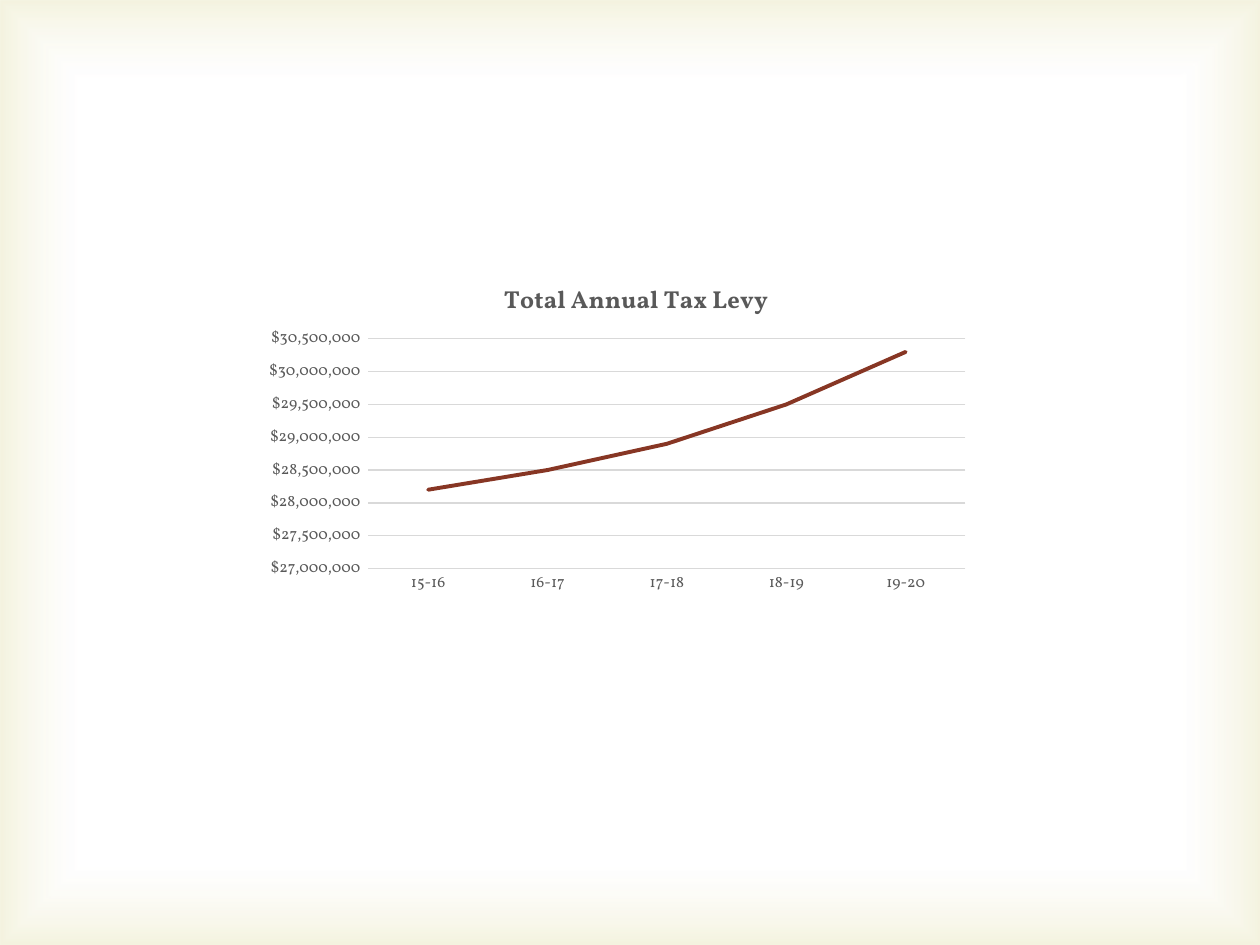
from lxml import etree
from pptx import Presentation
from pptx import util as u
from pptx.chart.data import CategoryChartData
from pptx.dml.color import RGBColor
from pptx.enum import chart as ch, shapes
from pptx.oxml import parse_xml
from pptx.oxml.ns import nsdecls, qn

PX = 914400 / 126
FONT = "Vollkorn"
HUE = {"white": "FFFFFF", "edge": "D1CA75", "text": "595959",
       "grid": "D9D9D9", "line": "873624"}


def px(n):
    return u.Emu(round(n * PX))


def ink(font, size, bold=False):
    font.name, font.size, font.bold = FONT, u.Pt(size), bold
    font.color.rgb = RGBColor.from_string(HUE["text"])


prs = Presentation()
prs.slide_width, prs.slide_height = px(1260), px(945)
slide = prs.slides.add_slide(prs.slide_layouts[6])

# Soft tinted frame: a rectangular gradient, clear in the middle
frame = slide.shapes.add_shape(shapes.MSO_SHAPE.RECTANGLE, 0, 0, px(1260), px(945))
frame.shadow.inherit = False
frame.line.fill.background()
stops = "".join(
    f'<a:gs pos="{pos}000"><a:srgbClr val="{HUE[key]}"><a:alpha val="{alpha}000"/></a:srgbClr></a:gs>'
    for pos, key, alpha in [(83, "white", 11), (100, "edge", 23)])
grad = parse_xml(
    f'<a:gradFill {nsdecls("a")} rotWithShape="1"><a:gsLst>{stops}</a:gsLst>'
    '<a:path path="rect"><a:fillToRect l="50000" t="50000" r="50000" b="50000"/></a:path>'
    '</a:gradFill>')
frame.element.spPr.find(qn("a:prstGeom")).addnext(grad)

# Line chart, levy in dollars
data = CategoryChartData()
data.categories = ["15-16", "16-17", "17-18", "18-19", "19-20"]
data.add_series("Series 1", [28200000, 28500000, 28900000, 29500000, 30300000])
chart = slide.shapes.add_chart(ch.XL_CHART_TYPE.LINE, px(252), px(260),
                               px(728), px(343), data).chart
chart.has_legend = False
chart.font.name, chart.font.size = FONT, u.Pt(10)

# Title
chart.has_title = True
title = chart.chart_title
title.include_in_layout = False
para = title.text_frame.paragraphs[0]
para.text = "Total Annual Tax Levy"
ink(para.font, 14, True)

# Series
plot = chart.plots[0]
plot.vary_by_categories = False
levy = plot.series[0]
levy.smooth = False
levy.marker.style = ch.XL_MARKER_STYLE.NONE
levy.format.line.width = u.Pt(2.25)
levy.format.line.color.rgb = RGBColor.from_string(HUE["line"])
etree.SubElement(levy.format.line._get_or_add_ln(), qn("a:round"))
levy.format.line._get_or_add_ln().set("cap", "rnd")

# Axes
cat, val = chart.category_axis, chart.value_axis
for axis in (cat, val):
    axis.major_tick_mark = axis.minor_tick_mark = ch.XL_TICK_MARK.NONE
    ink(axis.tick_labels.font, 9)
val.minimum_scale, val.maximum_scale, val.major_unit = 27000000, 30500000, 500000
val.has_major_gridlines = True
val.format.line.fill.background()
val.tick_labels.number_format = '_("$"* #,##0_);_("$"* \\(#,##0\\);_("$"* "-"??_);_(@_)'
val.tick_labels.number_format_is_linked = False
for rule in (cat.format.line, val.major_gridlines.format.line):
    rule.width = u.Pt(0.75)
    rule.color.rgb = RGBColor.from_string(HUE["grid"])

# Title and inner plot area, placed as shares of the chart
area = chart.element.find(".//" + qn("c:plotArea"))
edge = [("xMode", "edge"), ("yMode", "edge")]
for host, slot, marks in [
        (title.format.element if hasattr(title.format, "element") else area.getparent().find(qn("c:title")),
         1, edge + [("x", 0.34), ("y", 0.05)]),
        (area, 0, [("layoutTarget", "inner")] + edge
         + [("x", 0.16), ("y", 0.23), ("w", 0.82), ("h", 0.67)])]:
    for old in host.findall(qn("c:layout")):
        host.remove(old)
    layout = etree.Element(qn("c:layout"))
    manual = etree.SubElement(layout, qn("c:manualLayout"))
    for tag, share in marks:
        etree.SubElement(manual, qn("c:" + tag)).set("val", str(share))
    host.insert(slot, layout)

prs.save("out.pptx")
